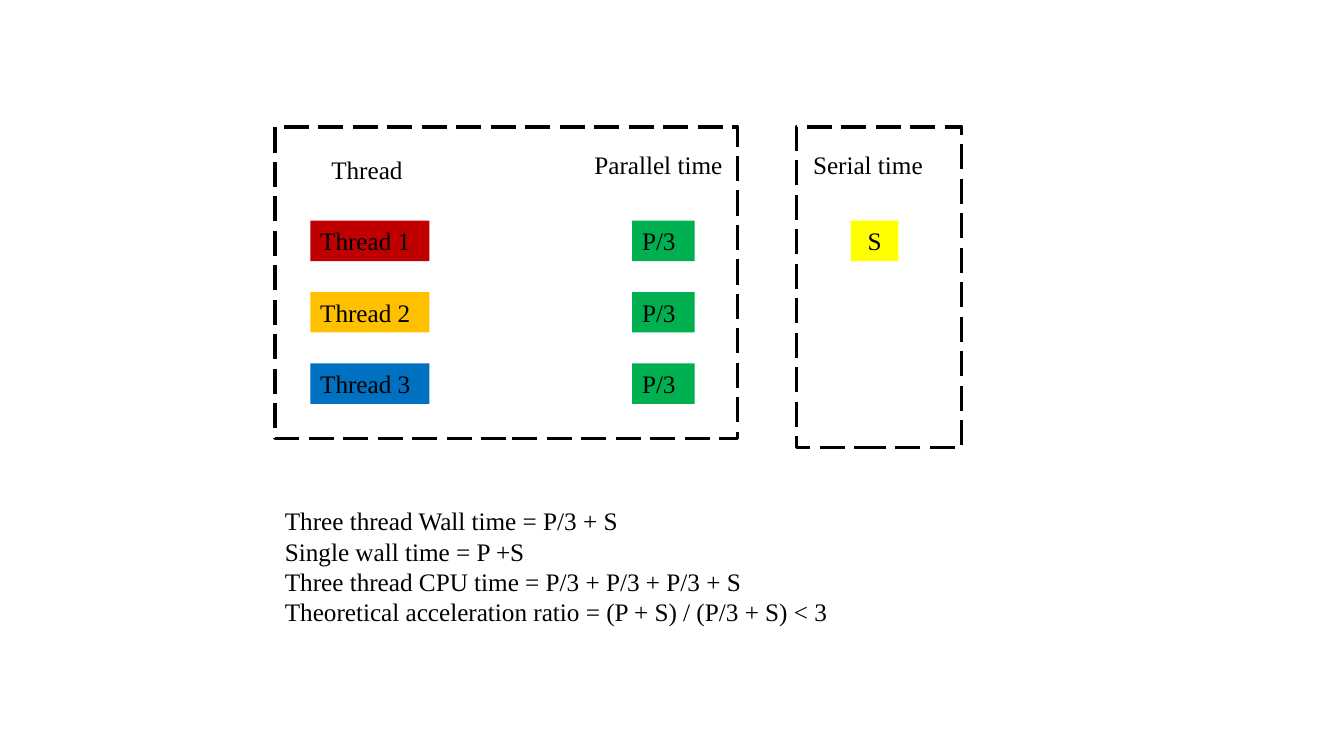
import pptx
import pptx.dml.color
import pptx.enum.dml
import pptx.enum.shapes
import pptx.enum.text
import pptx.util

Cm = pptx.util.Cm
ALIGN = pptx.enum.text.PP_ALIGN
RECTANGLE = pptx.enum.shapes.MSO_SHAPE.RECTANGLE

COLOURS = {
    "ink": "000000",
    "thread 1": "C00000",
    "thread 2": "FFC000",
    "thread 3": "0070C0",
    "parallel": "00B050",
    "serial": "FFFF00",
}
FONT = "Times New Roman"
ROW_HEIGHT = 1.02
FIRST_ROW = 5.56
ROW_PITCH = 1.8


def colour(name):
    return pptx.dml.color.RGBColor.from_string(COLOURS[name])


def write(holder, lines, align=ALIGN.LEFT):
    frame = holder.text_frame
    frame.word_wrap = True
    frame.vertical_anchor = pptx.enum.text.MSO_ANCHOR.TOP
    frame.auto_size = pptx.enum.text.MSO_AUTO_SIZE.SHAPE_TO_FIT_TEXT
    for index, line in enumerate(lines):
        paragraph = frame.paragraphs[0] if index == 0 else frame.add_paragraph()
        paragraph.alignment = align
        run = paragraph.add_run()
        run.text = line
        run.font.name = FONT
        run.font.size = pptx.util.Pt(18)
        run.font.color.rgb = colour("ink")


def add_label(slide, left, top, width, height, *lines):
    label = slide.shapes.add_textbox(Cm(left), Cm(top), Cm(width), Cm(height))
    write(label, lines)


def add_block(slide, left, row, width, text, fill, align=ALIGN.LEFT):
    top = FIRST_ROW + row * ROW_PITCH
    block = slide.shapes.add_shape(
        RECTANGLE, Cm(left), Cm(top), Cm(width), Cm(ROW_HEIGHT))
    block.shadow.inherit = False
    block.fill.solid()
    block.fill.fore_color.rgb = colour(fill)
    block.line.fill.background()
    write(block, [text], align)


def add_dashed_frame(slide, left, top, width, height):
    frame = slide.shapes.add_shape(
        RECTANGLE, Cm(left), Cm(top), Cm(width), Cm(height))
    frame.shadow.inherit = False
    frame.fill.background()
    frame.line.color.rgb = colour("ink")
    frame.line.width = pptx.util.Pt(2.25)
    frame.line.dash_style = pptx.enum.dml.MSO_LINE.LONG_DASH


def main():
    deck = pptx.Presentation()
    deck.slide_width = Cm(33.87)
    deck.slide_height = Cm(19.05)
    slide = deck.slides.add_slide(deck.slide_layouts[6])

    # Threads and their share of the parallel time
    for row in range(3):
        thread = row + 1
        add_block(slide, 7.82, row, 3, f"Thread {thread}", f"thread {thread}")
        add_block(slide, 15.93, row, 1.58, "P/3", "parallel")

    # Serial time
    add_block(slide, 21.44, 0, 1.2, "S", "serial", ALIGN.CENTER)

    # Column headings
    add_label(slide, 8.1, 3.76, 2.44, ROW_HEIGHT, "Thread")
    add_label(slide, 14.73, 3.64, 3.96, ROW_HEIGHT, "Parallel time")
    add_label(slide, 20.24, 3.64, 3.96, ROW_HEIGHT, "Serial time")

    # Formulas
    add_label(
        slide, 6.93, 12.62, 22.81, 3.33,
        "Three thread Wall time = P/3 + S",
        "Single wall time = P +S",
        "Three thread CPU time = P/3 + P/3 + P/3 + S",
        "Theoretical acceleration ratio = (P + S) / (P/3 + S) < 3",
    )

    # Frames around the parallel and serial parts
    add_dashed_frame(slide, 6.93, 3.2, 11.66, 7.85)
    add_dashed_frame(slide, 20.07, 3.2, 4.17, 8.08)

    deck.save("out.pptx")


if __name__ == "__main__":
    main()
